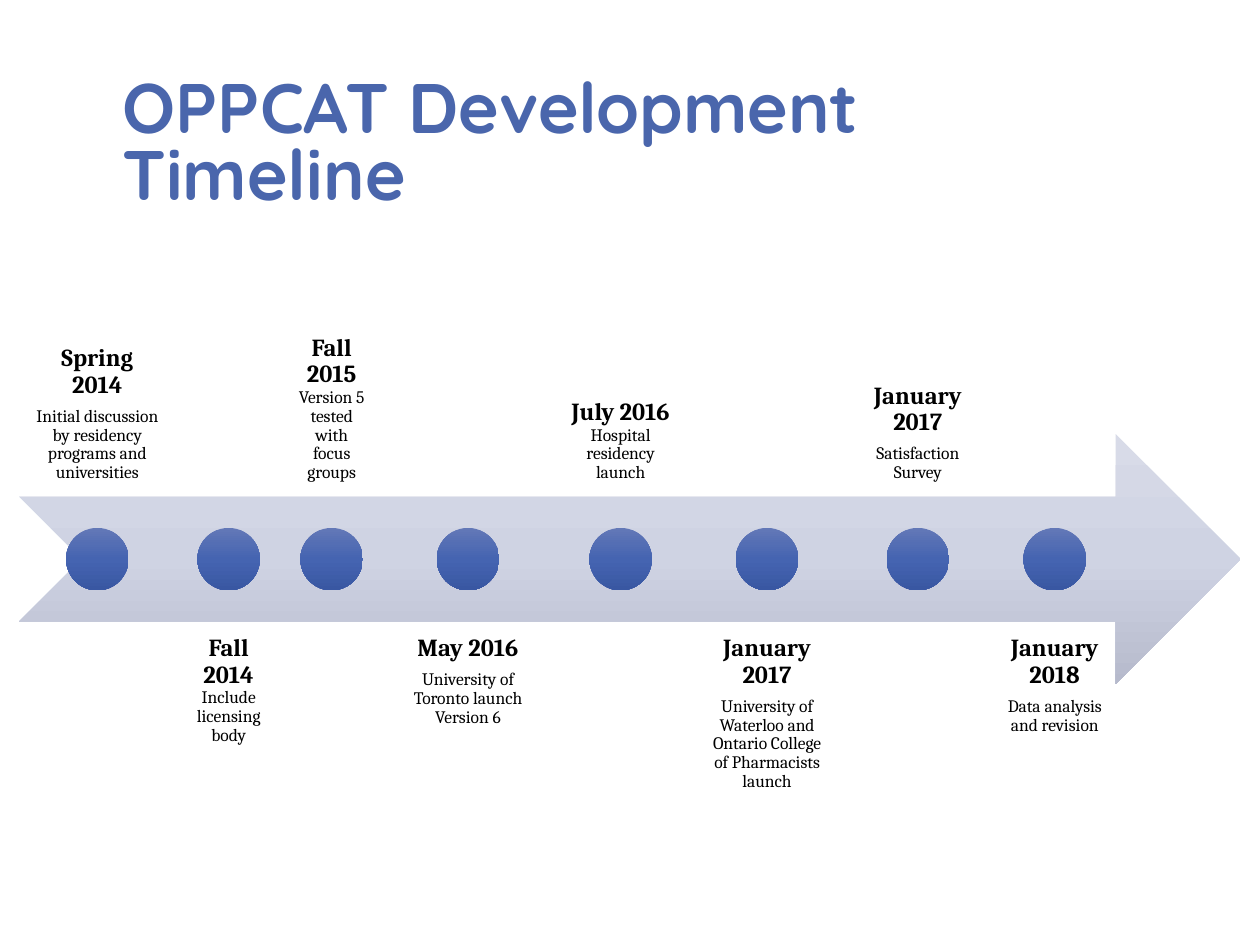
from copy import deepcopy

from pptx import Presentation
from pptx.dml.color import RGBColor
from pptx.enum.shapes import MSO_SHAPE as Shape
from pptx.enum.text import MSO_ANCHOR as Anchor, PP_ALIGN as Align
from pptx.oxml.ns import qn
from pptx.util import Pt

COLORS = {
    "title": "4A66AC",
    "text": "000000",
    "arrow": ("D8DBE8", "CFD3E3", "B6BACC"),
    "dot": ("6378B7", "4564B1", "3957A2"),
}
DATE_FORMAT = {"name": "Cambria", "size": Pt(14), "bold": True}
DETAIL_FORMAT = {"name": "Cambria", "size": Pt(10), "bold": False}
TITLE_FORMAT = {"name": "Quicksand", "size": Pt(40), "bold": True}

# Date, detail, label width, whether the detail starts its own paragraph
MILESTONES = [
    ("Spring 2014", "Initial discussion by residency programs and universities", 88.6, True),
    ("Fall 2014", "Include licensing body", 56.2, False),
    ("Fall 2015", "Version 5 tested with focus groups", 56.2, False),
    ("May 2016", "University of Toronto launch Version 6", 94.3, True),
    ("July 2016", "Hospital residency launch", 74.9, False),
    ("January 2017", "University of Waterloo and Ontario College of Pharmacists launch", 87.1, True),
    ("January 2017", "Satisfaction Survey", 79.9, True),
    ("January 2018", "Data analysis and revision", 71.3, True),
]
LABEL_GAP = 2.65
LABEL_INSET = 7.9
DOT_SIZE = 35.7


def add_run(paragraph, text, font_format, color):
    run = paragraph.add_run()
    run.text = text
    for name, value in font_format.items():
        setattr(run.font, name, value)
    run.font.color.rgb = RGBColor.from_string(COLORS[color])


def add_text_frame(slide, left, top, width, height, anchor):
    box = slide.shapes.add_textbox(Pt(left), Pt(top), Pt(width), Pt(height))
    frame = box.text_frame
    frame.word_wrap = True
    frame.vertical_anchor = anchor
    return frame


def add_gradient_shape(slide, kind, left, top, width, height, colors):
    """Add a borderless shape shaded evenly from top to bottom."""
    shape = slide.shapes.add_shape(kind, Pt(left), Pt(top), Pt(width), Pt(height))
    shape.shadow.inherit = False
    shape.line.fill.background()
    shape.fill.gradient()
    shape.fill.gradient_angle = 270
    stop_list = next(shape.element.iter(qn("a:gsLst")))
    stop_list.append(deepcopy(stop_list[-1]))
    for index, (stop, color) in enumerate(zip(shape.fill.gradient_stops, colors)):
        stop.position = index / (len(colors) - 1)
        stop.color.rgb = RGBColor.from_string(color)


def add_title(slide, left, top, width, height):
    frame = add_text_frame(slide, left, top, width, height, Anchor.BOTTOM)
    paragraph = frame.paragraphs[0]
    paragraph.line_spacing = 0.8
    add_run(paragraph, "OPPCAT Development Timeline", TITLE_FORMAT, "title")


def add_label(slide, left, top, width, height, anchor, date, detail, separate):
    frame = add_text_frame(slide, left, top, width, height, anchor)
    for side in ("left", "top", "right", "bottom"):
        setattr(frame, f"margin_{side}", Pt(LABEL_INSET))
    paragraph = frame.paragraphs[0]
    add_run(paragraph, date if separate else f"{date} ", DATE_FORMAT, "text")
    if separate:
        paragraph = frame.add_paragraph()
    add_run(paragraph, detail, DETAIL_FORMAT, "text")
    for paragraph in frame.paragraphs:
        paragraph.alignment = Align.CENTER
        paragraph.line_spacing = 0.9
        paragraph.space_after = Pt(4.9)


def add_timeline(slide, left, top, width, height):
    """Place an arrow across the middle, with labels above and below in turn."""
    band = height * 0.4
    add_gradient_shape(slide, Shape.NOTCHED_RIGHT_ARROW, left, top + height * 0.3,
                       width, band, COLORS["arrow"])
    label_left = left + 0.3
    for index, (date, detail, label_width, separate) in enumerate(MILESTONES):
        below = index % 2 == 1
        label_top = top + height - band if below else top
        add_label(slide, label_left, label_top, label_width, band,
                  Anchor.TOP if below else Anchor.BOTTOM, date, detail, separate)
        add_gradient_shape(slide, Shape.OVAL, label_left + (label_width - DOT_SIZE) / 2,
                           top + (height - DOT_SIZE) / 2, DOT_SIZE, DOT_SIZE, COLORS["dot"])
        label_left += label_width + LABEL_GAP


def main():
    presentation = Presentation()
    presentation.slide_width = Pt(720)
    presentation.slide_height = Pt(540)
    slide = presentation.slides.add_slide(presentation.slide_layouts[6])
    add_title(slide, 63, 42, 513, 84)
    add_timeline(slide, 11, 141, 698, 357)
    presentation.save("out.pptx")


if __name__ == "__main__":
    main()
